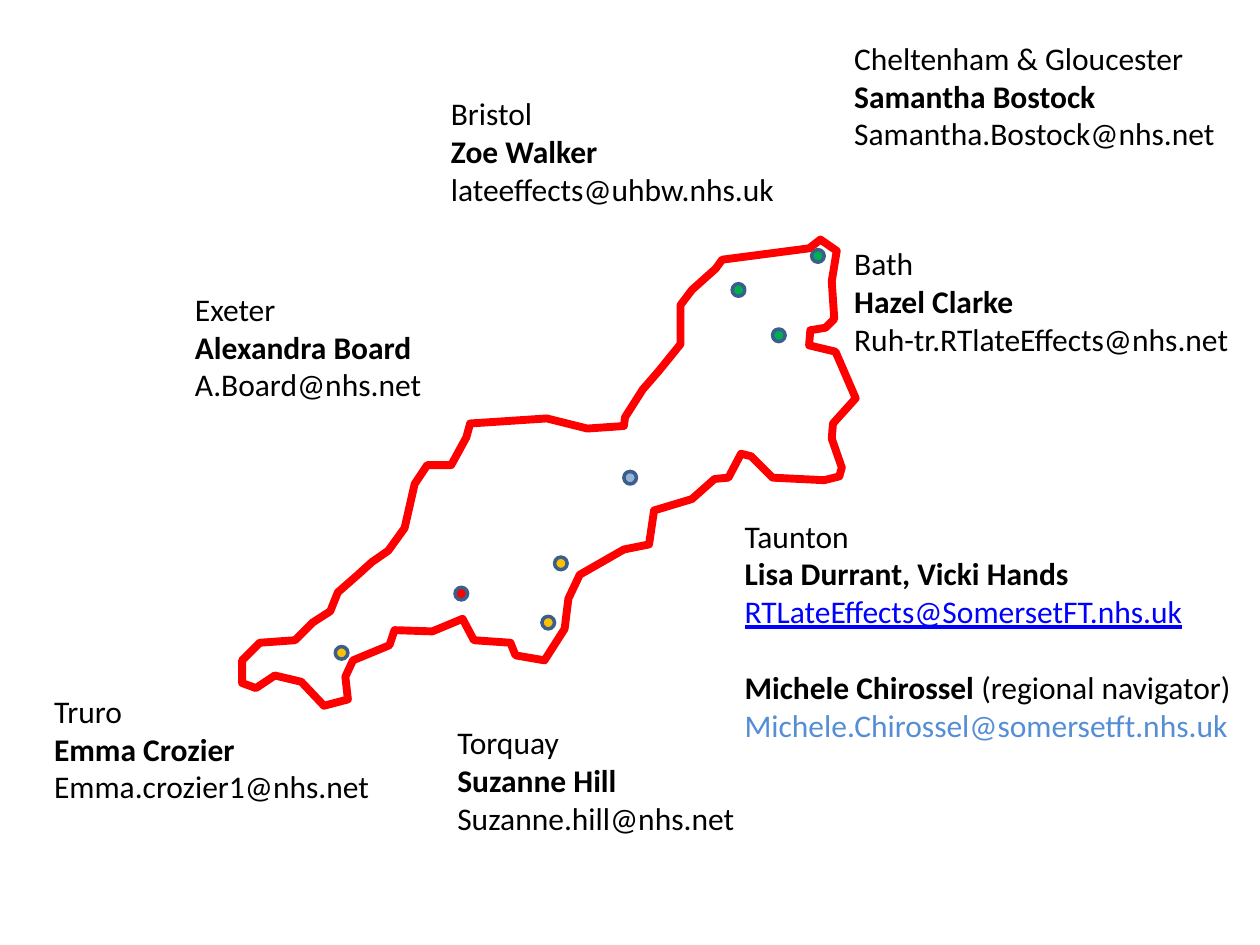
from pptx import Presentation
from pptx.dml.color import RGBColor
from pptx.enum.shapes import MSO_SHAPE as SHAPE
from pptx.oxml.ns import qn
from pptx.util import Cm, Pt
from lxml.etree import SubElement

BLACK = RGBColor(0x00, 0x00, 0x00)
LINK = RGBColor(0x00, 0x00, 0xFF)
SKY = RGBColor(0x55, 0x8E, 0xD5)
RED = RGBColor(0xFF, 0x00, 0x00)
AMBER = RGBColor(0xFF, 0xC0, 0x00)
GREEN = RGBColor(0x00, 0xB0, 0x50)
PALE_BLUE = RGBColor(0x95, 0xB3, 0xD7)
DOT_EDGE = RGBColor(0x3A, 0x5F, 0x8C)

# Map grid: 100 units to 2.54 cm, measured from the map's top left corner
UNIT = int(Cm(2.54) / 100)
DOT_SIZE = 10

COAST = [
    # North coast, from the south-west up to the north-east
    (105, 256), (118, 247), (131, 229), (139, 194), (149, 179), (168, 179),
    (180, 157), (183, 146), (244, 142), (276, 150), (305, 148), (306, 141),
    (320, 119), (333, 104), (350, 83), (350, 52), (359, 40), (378, 23),
    (383, 16), (452, 7), (461, 0), (474, 9), (470, 33), (472, 63),
    # Eastern edge
    (465, 70), (453, 72), (452, 84), (473, 89), (489, 126), (471, 146),
    (470, 158), (478, 181), (476, 188), (464, 191),
    # South coast, back to the south-west
    (423, 189), (406, 172), (398, 170), (388, 189), (377, 190), (359, 206),
    (329, 215), (325, 242), (305, 246), (270, 266), (261, 285), (258, 309),
    (242, 334), (219, 330), (215, 320), (186, 318), (177, 301), (153, 311),
    (123, 310), (119, 322), (90, 334), (84, 347), (86, 365), (67, 370),
    # South-western tip
    (49, 351), (28, 346), (13, 356), (2, 352), (2, 334), (16, 320),
    (44, 318), (58, 304), (72, 295), (78, 280), (94, 266),
]

DOTS = [
    (76, 323, AMBER), (240, 299, AMBER), (250, 252, AMBER), (171, 276, RED),
    (305, 184, PALE_BLUE), (454, 8, GREEN), (391, 35, GREEN), (423, 71, GREEN),
]

# Left and top in cm, then place, name and address
CONTACTS = [
    (16.97, 4.8, "Bath", "Hazel Clarke", "Ruh-tr.RTlateEffects@nhs.net"),
    (16.97, 0.66, "Cheltenham & Gloucester", "Samantha Bostock",
     "Samantha.Bostock@nhs.net"),
    (8.84, 1.78, "Bristol", "Zoe Walker", "lateeffects@uhbw.nhs.uk"),
    (0.84, 13.82, "Truro", "Emma Crozier", "Emma.crozier1@nhs.net"),
    (3.68, 5.72, "Exeter", "Alexandra Board", "A.Board@nhs.net"),
    (8.97, 14.45, "Torquay", "Suzanne Hill", "Suzanne.hill@nhs.net"),
]
NARROW, WIDE = Cm(7.19), Cm(8.2)
RIGHT_COLUMN = 16


def add_map(slide, left, top):
    """Red outline of the region with a dot for each centre."""
    for x, y, color in DOTS:
        sp = slide.shapes.add_shape(SHAPE.OVAL, left + x * UNIT, top + y * UNIT,
                                    DOT_SIZE * UNIT, DOT_SIZE * UNIT)
        sp.shadow.inherit = False
        sp.fill.solid()
        sp.fill.fore_color.rgb = color
        sp.line.color.rgb = DOT_EDGE
        sp.line.width = Pt(2)

    outline = slide.shapes.build_freeform(*COAST[0], scale=UNIT)
    outline.add_line_segments(COAST[1:], close=True)
    sp = outline.convert_to_shape(left, top)
    sp.shadow.inherit = False
    sp.fill.background()
    sp.line.color.rgb = RED
    sp.line.width = Pt(4.5)
    SubElement(sp.line._get_or_add_ln(), qn("a:round"))


def add_line(tf, text, bold=False, color=BLACK):
    """Add one paragraph, using the empty first one if it is free."""
    p = tf.paragraphs[0]
    if p.runs:
        p = tf.add_paragraph()
    p.add_run().text = text
    p.font.name = "Calibri"
    p.font.size = Pt(18)
    p.font.bold = bold
    p.font.color.rgb = color
    return p


def add_contact(slide, left, top, width, height, place, name, address,
                address_color=BLACK):
    """Place, bold name and address; returns the text frame."""
    tf = slide.shapes.add_textbox(left, top, width, height).text_frame
    tf.word_wrap = True
    add_line(tf, place)
    add_line(tf, name, bold=True)
    add_line(tf, address, color=address_color)
    return tf


def add_lead_contact(slide, left, top, width, height):
    """Taunton contact followed by the regional navigator."""
    tf = add_contact(slide, left, top, width, height, "Taunton",
                     "Lisa Durrant, Vicki Hands",
                     "RTLateEffects@SomersetFT.nhs.uk", LINK)
    tf.paragraphs[-1].font.underline = True
    p = add_line(tf, "Michele Chirossel ")
    p.space_before = Pt(22)
    p.runs[0].font.bold = True
    p.add_run().text = "(regional navigator)"
    add_line(tf, "Michele.Chirossel@somersetft.nhs.uk", color=SKY)


def main():
    prs = Presentation()
    prs.slide_width, prs.slide_height = Cm(25.4), Cm(19.05)
    slide = prs.slides.add_slide(prs.slide_layouts[6])
    add_map(slide, Cm(4.83), Cm(4.83))
    add_lead_contact(slide, Cm(14.76), Cm(10.29), Cm(10.67), Cm(6.4))
    for left, top, *lines in CONTACTS:
        width = WIDE if left > RIGHT_COLUMN else NARROW
        add_contact(slide, Cm(left), Cm(top), width, Cm(2.57), *lines)
    prs.save("out.pptx")


if __name__ == "__main__":
    main()
